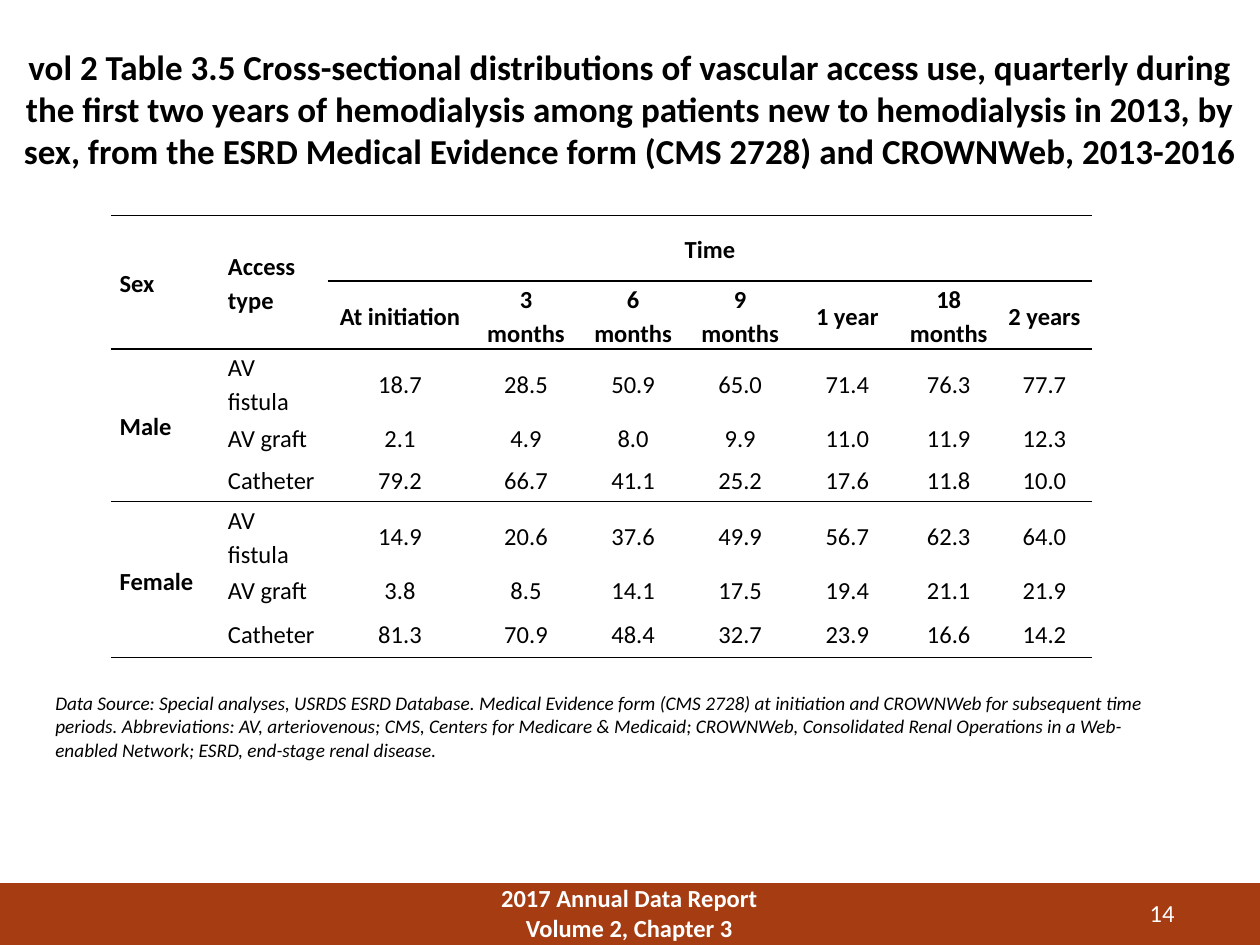
"""Build the slide on vascular access use by sex."""
from dataclasses import dataclass
from typing import NamedTuple

from lxml.etree import SubElement as Sub
from pptx import Presentation as Deck
from pptx.dml.color import RGBColor as Rgb
from pptx.enum.shapes import MSO_SHAPE as Shape
from pptx.enum.text import MSO_ANCHOR as Anchor, PP_ALIGN as Align
from pptx.oxml.ns import qn
from pptx.util import Inches, Pt


@dataclass(frozen=True)
class Theme:
    font: str = "Calibri"
    ink: str = "000000"
    paper: str = "FFFFFF"
    rust: str = "A63C12"
    title: int = 20
    body: int = 14
    note: int = 11
    rule: int = 1
    lead: float = 1.15


class Box(NamedTuple):
    left: float
    top: float
    width: float
    height: float


class Label(NamedTuple):
    box: Box
    lines: list[str]
    size: int
    ink: str
    align: Align = Align.CENTER
    anchor: Anchor = Anchor.TOP
    face: dict = {}


class Group(NamedTuple):
    sex: str
    rates: dict[str, str]


THEME = Theme()
BAND = Box(0, 7.01, 10, 0.5)
GRID = Box(0.88, 1.71, 7.8, 3.51)
COLS = [0.86, 0.86, 1.15] + [0.85] * 4 + [0.76] * 2
ROWS = [0.52, 0.54, 0.54, 0.31, 0.36, 0.54, 0.31, 0.39]
TIMES = ["At initiation", "3 months", "6 months", "9 months",
         "1 year", "18 months", "2 years"]
GROUPS = [
    Group("Male", {"AV fistula": "18.7 28.5 50.9 65.0 71.4 76.3 77.7",
                   "AV graft": "2.1 4.9 8.0 9.9 11.0 11.9 12.3",
                   "Catheter": "79.2 66.7 41.1 25.2 17.6 11.8 10.0"}),
    Group("Female", {"AV fistula": "14.9 20.6 37.6 49.9 56.7 62.3 64.0",
                     "AV graft": "3.8 8.5 14.1 17.5 19.4 21.1 21.9",
                     "Catheter": "81.3 70.9 48.4 32.7 23.9 16.6 14.2"}),
]
SPANS = [(0, 0, 1, 0), (0, 1, 1, 1), (0, 2, 0, 8), (2, 0, 4, 0), (5, 0, 7, 0)]
RULES = {0, 2, 5, 8}
LABELS = [
    Label(Box(3.58, 6.96, 2.83, 0.33),
          ["2017 Annual Data Report", "Volume 2, Chapter 3"],
          THEME.body, THEME.paper, face={"bold": True}),
    Label(Box(8.42, 7.08, 1, 0.3), ["14"], THEME.body, THEME.paper, Align.RIGHT),
    Label(Box(0, 0.3, 10, 1.12),
          ["vol 2 Table 3.5 Cross-sectional distributions of vascular access use, "
           "quarterly during the first two years of hemodialysis among patients new "
           "to hemodialysis in 2013, by sex, from the ESRD Medical Evidence form "
           "(CMS 2728) and CROWNWeb, 2013-2016"],
          THEME.title, THEME.ink, anchor=Anchor.MIDDLE, face={"bold": True}),
    Label(Box(0.34, 5.44, 8.88, 0.66),
          ["Data Source: Special analyses, USRDS ESRD Database. Medical Evidence "
           "form (CMS 2728) at initiation and CROWNWeb for subsequent time periods. "
           "Abbreviations: AV, arteriovenous; CMS, Centers for Medicare & Medicaid; "
           "CROWNWeb, Consolidated Renal Operations in a Web-enabled Network; ESRD, "
           "end-stage renal disease."],
          THEME.note, THEME.ink, Align.LEFT, face={"italic": True}),
]


def place(box: Box) -> list[int]:
    return [Inches(side) for side in box]


def apply(target, **form) -> None:
    for name, value in form.items():
        setattr(target, name, value)


def write(para, text: str, size: int, ink: str, align: Align, **face) -> None:
    run = para.add_run()
    run.text = text
    para.alignment = align
    apply(run.font, name=THEME.font, size=Pt(size), **face)
    run.font.color.rgb = Rgb.from_string(ink)


def draw_label(slide, label: Label) -> None:
    frame = slide.shapes.add_textbox(*place(label.box)).text_frame
    apply(frame, word_wrap=True, vertical_anchor=label.anchor)
    for at, line in enumerate(label.lines):
        para = frame.add_paragraph() if at else frame.paragraphs[0]
        write(para, line, label.size, label.ink, label.align, **label.face)


def draw_band(slide) -> None:
    band = slide.shapes.add_shape(Shape.RECTANGLE, *place(BAND))
    band.shadow.inherit = False
    band.fill.solid()
    band.fill.fore_color.rgb = Rgb.from_string(THEME.rust)
    band.line.fill.background()


def is_ruled(edge: int, col: int) -> bool:
    return edge in RULES or (edge == 1 and col >= 2)


def draw_edges(cell, row: int, col: int) -> None:
    tall = cell.span_height if cell.is_merge_origin else 1
    marks = {"lnL": False, "lnR": False, "lnT": is_ruled(row, col),
             "lnB": is_ruled(row + tall, col)}
    props = cell._tc.get_or_add_tcPr()
    for tag, ruled in marks.items():
        line = Sub(props, qn(f"a:{tag}"), w=str(Pt(THEME.rule) if ruled else 0))
        fill = Sub(line, qn("a:solidFill" if ruled else "a:noFill"))
        if ruled:
            Sub(fill, qn("a:srgbClr"), val=THEME.ink)


def fill_cell(cell, text: str, row: int, col: int) -> None:
    tight = text == "18 months"
    pad = Inches(0 if tight else 0.07)
    apply(cell, margin_left=pad, margin_right=pad, margin_top=0,
          margin_bottom=0, vertical_anchor=Anchor.MIDDLE)
    draw_edges(cell, row, col)
    cell.fill.solid()
    cell.fill.fore_color.rgb = Rgb.from_string(THEME.paper)
    if text:
        para = cell.text_frame.paragraphs[0]
        para.line_spacing = THEME.lead
        align = Align.LEFT if col < 2 else Align.CENTER
        write(para, text, THEME.body, THEME.ink, align, bold=row < 2 or col == 0)


def list_rows() -> list[list[str]]:
    rows = [["Sex", "Access type", "Time"] + [""] * 6, ["", ""] + TIMES]
    for group in GROUPS:
        for at, (kind, rates) in enumerate(group.rates.items()):
            rows.append(["" if at else group.sex, kind, *rates.split()])
    return rows


def draw_table(slide) -> None:
    table = slide.shapes.add_table(len(ROWS), len(COLS), *place(GRID)).table
    apply(table, first_row=False, horz_banding=False)
    for col, width in zip(table.columns, COLS):
        col.width = Inches(width)
    for row, height in zip(table.rows, ROWS):
        row.height = Inches(height)
    for top, left, low, right in SPANS:
        table.cell(top, left).merge(table.cell(low, right))
    for row, texts in enumerate(list_rows()):
        for col, text in enumerate(texts):
            fill_cell(table.cell(row, col), text, row, col)


def main() -> None:
    deck = Deck()
    apply(deck, slide_width=Inches(10), slide_height=Inches(7.5))
    slide = deck.slides.add_slide(deck.slide_layouts[6])
    draw_band(slide)
    *heads, note = LABELS
    for label in heads:
        draw_label(slide, label)
    draw_table(slide)
    draw_label(slide, note)
    deck.save("out.pptx")


if __name__ == "__main__":
    main()
